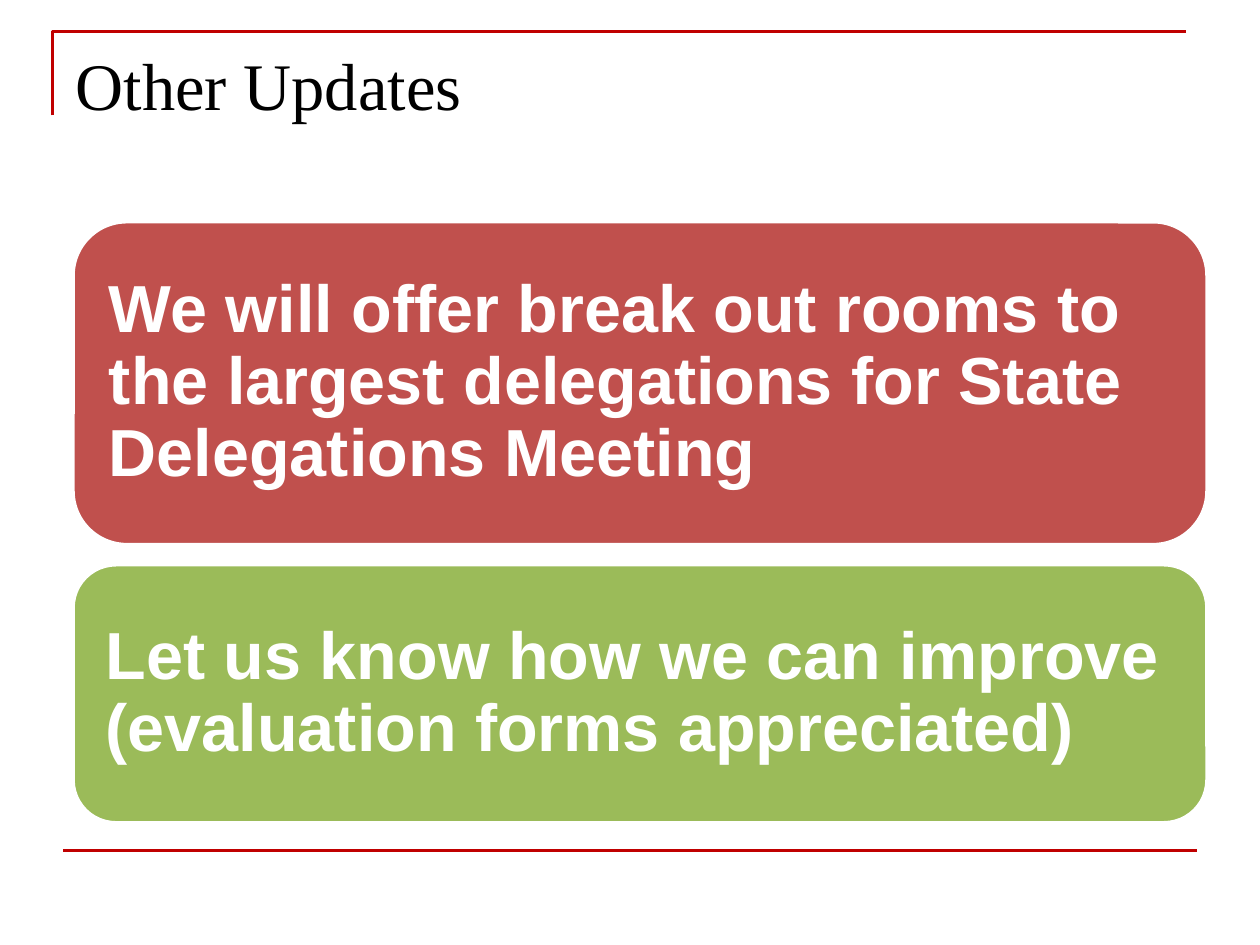
from dataclasses import dataclass

from lxml import etree
from pptx import Presentation
from pptx import util as u
from pptx.dml.color import RGBColor
from pptx.enum import shapes, text
from pptx.oxml.ns import qn


@dataclass(frozen=True)
class Theme:
    """Colours, fonts and type sizes of the slide."""
    rule: str = "C00000"
    ink: str = "000000"
    paper: str = "FFFFFF"
    red: str = "C0504D"
    green: str = "9BBB59"
    title_font: str = "Times New Roman"
    body_font: str = "Arial"
    size: float = 38
    rule_width: float = 1.5
    card_line: float = 2


class Deck:
    """Holds the theme and the current slide, and draws elements on it."""

    def __init__(self, prs, theme):
        """Add a title-only slide to the presentation."""
        self.theme = theme
        self.slide = prs.slides.add_slide(prs.slide_layouts[5])

    def stroke(self, sp, color, width):
        """Outline a shape in one colour."""
        sp.line.color.rgb = RGBColor.from_string(color)
        sp.line.width = u.Pt(width)

    def set_words(self, tf, words, font, color, bold=False):
        """Set left-aligned text and format its runs."""
        tf.text = words
        tf.word_wrap = True
        tf.auto_size = text.MSO_AUTO_SIZE.NONE
        for p in tf.paragraphs:
            p.alignment = text.PP_ALIGN.LEFT
            for r in p.runs:
                r.font.name = font
                r.font.size = u.Pt(self.theme.size)
                r.font.bold = bold
                r.font.color.rgb = RGBColor.from_string(color)

    def title(self, words, x, y, w, h):
        """Place and fill the title placeholder."""
        sp = self.slide.shapes.title
        sp.left, sp.top, sp.width, sp.height = map(u.Pt, (x, y, w, h))
        tf = sp.text_frame
        self.set_words(tf, words, self.theme.title_font, self.theme.ink)
        tf.vertical_anchor = text.MSO_ANCHOR.TOP

    def bracket(self, x, y, w, h):
        """Draw the open corner rule around the title."""
        fb = self.slide.shapes.build_freeform(u.Pt(x), u.Pt(y + h))
        fb.add_line_segments([(u.Pt(x), u.Pt(y)), (u.Pt(x + w), u.Pt(y))], close=False)
        sp = fb.convert_to_shape()
        sp.shadow.inherit = False
        sp.fill.background()
        self.stroke(sp, self.theme.rule, self.theme.rule_width)

    def rule(self, x, y, w):
        """Draw a horizontal rule."""
        sp = self.slide.shapes.add_connector(
            shapes.MSO_CONNECTOR.STRAIGHT, u.Pt(x), u.Pt(y), u.Pt(x + w), u.Pt(y))
        self.stroke(sp, self.theme.rule, self.theme.rule_width)
        etree.SubElement(sp._element.spPr, qn("a:effectLst"))

    def card(self, words, fill, x, y, w, h, inset=11.5):
        """Draw a rounded card with bold text."""
        sp = self.slide.shapes.add_shape(
            shapes.MSO_SHAPE.ROUNDED_RECTANGLE, *map(u.Pt, (x, y, w, h)))
        sp.shadow.inherit = False
        sp.fill.solid()
        sp.fill.fore_color.rgb = RGBColor.from_string(fill)
        self.stroke(sp, self.theme.paper, self.theme.card_line)
        tf = sp.text_frame
        self.set_words(tf, words, self.theme.body_font, self.theme.paper, bold=True)
        tf.vertical_anchor = text.MSO_ANCHOR.MIDDLE
        tf.margin_left = tf.margin_right = u.Pt(inset)
        tf.margin_top = tf.margin_bottom = u.Pt(inset)
        tf.paragraphs[0].line_spacing = 0.9


def main():
    """Build the slide and save it."""
    prs = Presentation()
    prs.slide_width, prs.slide_height = u.Pt(720), u.Pt(540)
    theme = Theme()
    deck = Deck(prs, theme)
    width = 648
    deck.bracket(30, 18, width, 48)
    deck.rule(36, 486, width)
    deck.title("Other Updates", 36, 21.6, width, 90)
    cards = [
        ("We will offer break out rooms to the largest delegations "
         "for State Delegations Meeting", theme.red, 184.5),
        ("Let us know how we can improve (evaluation forms appreciated)",
         theme.green, 147.5),
    ]
    top, gap = 126.7, 11.5
    for words, fill, height in cards:
        deck.card(words, fill, 41.75, top, width, height)
        top += height + gap
    prs.save("out.pptx")


if __name__ == "__main__":
    main()
